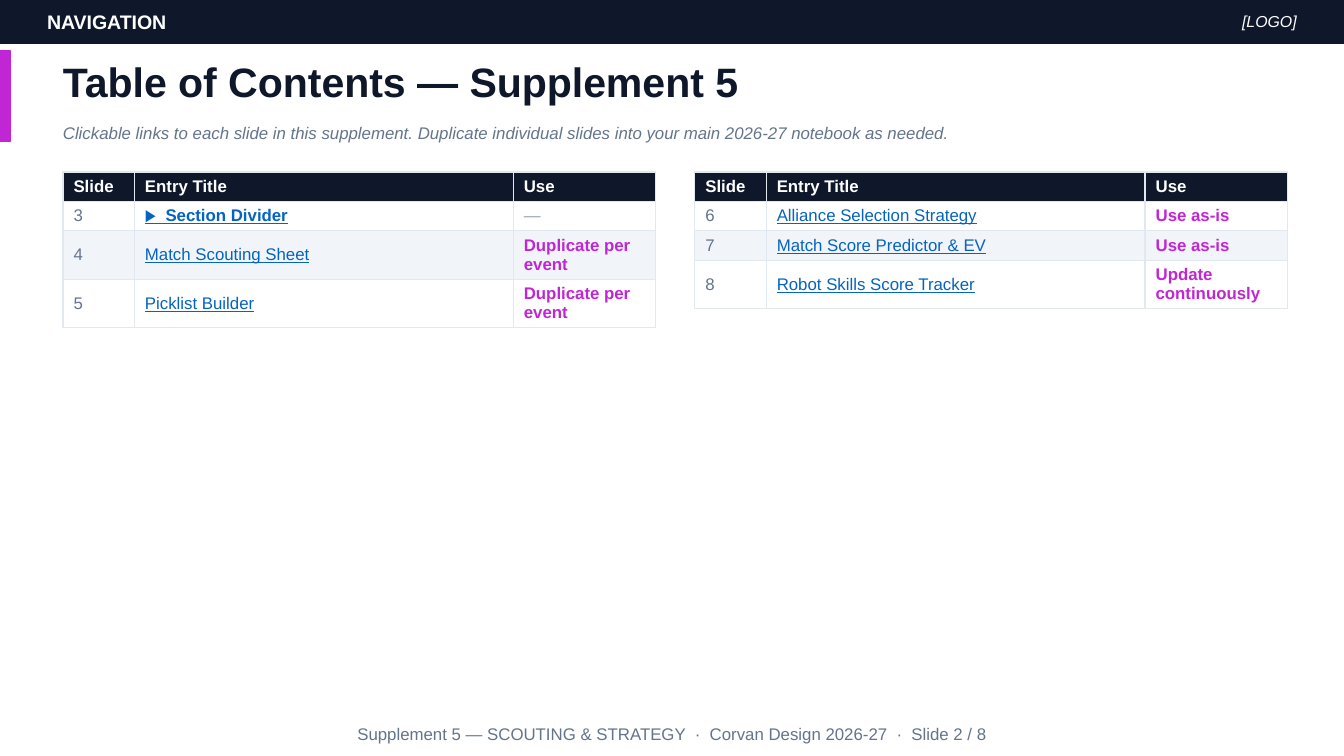
import pptx
import pptx.dml.color
import pptx.enum.shapes
import pptx.enum.text
import pptx.oxml
import pptx.oxml.ns
import pptx.util

Cm = pptx.util.Cm
Pt = pptx.util.Pt
RGB = pptx.dml.color.RGBColor
ALIGN = pptx.enum.text.PP_ALIGN
MIDDLE = pptx.enum.text.MSO_ANCHOR.MIDDLE

NAVY = RGB(0x0F, 0x17, 0x2A)
PINK = RGB(0xC0, 0x26, 0xD3)
SLATE = RGB(0x64, 0x74, 0x8B)
MUTED = RGB(0x94, 0xA3, 0xB8)
BLUE = RGB(0x05, 0x63, 0xC1)
PALE = RGB(0xF1, 0xF5, 0xF9)
RULE = RGB(0xE2, 0xE8, 0xF0)
WHITE = RGB(0xFF, 0xFF, 0xFF)

HEAD = ("Slide", "Entry Title", "Use")
COLS = (1.35, 7.16, 2.69)
LEFT = [
    ("3", "▶  Section Divider", "—"),
    ("4", "Match Scouting Sheet", "Duplicate per event"),
    ("5", "Picklist Builder", "Duplicate per event"),
]
RIGHT = [
    ("6", "Alliance Selection Strategy", "Use as-is"),
    ("7", "Match Score Predictor & EV", "Use as-is"),
    ("8", "Robot Skills Score Tracker", "Update continuously"),
]


def write(frame, text, size=9, color=SLATE, bold=False, italic=False,
          under=False, align=ALIGN.LEFT):
    """Put one formatted line of text into a text frame."""
    para = frame.paragraphs[0]
    para.alignment = align
    run = para.add_run()
    run.text = text
    font = run.font
    font.name, font.size = "Arial", Pt(size)
    font.bold, font.italic, font.underline = bold, italic, under
    font.color.rgb = color


class Deck:
    """Holds the style and the current slide."""

    def __init__(self):
        self.pres = pptx.Presentation()
        self.pres.slide_width, self.pres.slide_height = Cm(25.4), Cm(14.29)
        self.slide = self.pres.slides.add_slide(self.pres.slide_layouts[5])

    def frame(self, shape):
        """Strip insets and centre the text upright."""
        frame = shape.text_frame
        frame.word_wrap = True
        frame.auto_size = pptx.enum.text.MSO_AUTO_SIZE.NONE
        frame.vertical_anchor = MIDDLE
        frame.margin_left = frame.margin_right = 0
        frame.margin_top = frame.margin_bottom = 0
        return frame

    def bar(self, x, y, w, h, color):
        kind = pptx.enum.shapes.MSO_SHAPE.RECTANGLE
        bar = self.slide.shapes.add_shape(kind, Cm(x), Cm(y), Cm(w), Cm(h))
        bar.shadow.inherit = False
        bar.fill.solid()
        bar.fill.fore_color.rgb = color
        bar.line.color.rgb = color
        bar.line.width = Pt(1)

    def title(self, text, x, y, w, h, **style):
        title = self.slide.shapes.title
        title.left, title.top = Cm(x), Cm(y)
        title.width, title.height = Cm(w), Cm(h)
        write(self.frame(title), text, **style)

    def text(self, text, x, y, w, h, **style):
        box = self.slide.shapes.add_textbox(Cm(x), Cm(y), Cm(w), Cm(h))
        write(self.frame(box), text, **style)

    def cell(self, cell, text, fill, **style):
        cell.margin_left = cell.margin_right = Cm(0.2)
        cell.margin_top = cell.margin_bottom = Cm(0.1)
        cell.vertical_anchor = MIDDLE
        # Borders come before the fill in the cell's XML
        props = cell._tc.get_or_add_tcPr()
        for side in "LRTB":
            props.append(pptx.oxml.parse_xml(
                f'<a:ln{side} {pptx.oxml.ns.nsdecls("a")} w="{Pt(0.75)}">'
                f'<a:solidFill><a:srgbClr val="{RULE}"/></a:solidFill>'
                f'</a:ln{side}>'))
        cell.fill.solid()
        cell.fill.fore_color.rgb = fill
        write(cell.text_frame, text, **style)

    def table(self, rows, x, y):
        count = len(rows) + 1
        table = self.slide.shapes.add_table(
            count, len(COLS), Cm(x), Cm(y), Cm(sum(COLS)),
            Cm(0.3 * count)).table
        table.first_row = table.horz_banding = False
        for col, width in zip(table.columns, COLS):
            col.width = Cm(width)
        for c, text in enumerate(HEAD):
            self.cell(table.cell(0, c), text, NAVY, color=WHITE, bold=True)
        for r, (num, name, use) in enumerate(rows, 1):
            fill = PALE if r % 2 == 0 else WHITE
            none = use == "—"  # a section divider has no use
            self.cell(table.cell(r, 0), num, fill)
            self.cell(table.cell(r, 1), name, fill, color=BLUE,
                      bold=none, under=True)
            self.cell(table.cell(r, 2), use, fill, bold=not none,
                      italic=none, color=MUTED if none else PINK)


def main():
    deck = Deck()

    # Top band
    deck.bar(0, 0, 25.4, 0.81, NAVY)
    deck.text("NAVIGATION", 0.89, 0, 19.81, 0.81, size=10.5, color=WHITE,
              bold=True)
    deck.text("[LOGO]", 22.22, 0, 2.29, 0.81, size=8.5, color=WHITE,
              italic=True, align=ALIGN.RIGHT)

    # Heading with accent
    deck.bar(0, 0.97, 0.2, 1.7, PINK)
    deck.title("Table of Contents — Supplement 5", 1.19, 0.97, 23.19, 1.14,
               size=22, color=NAVY, bold=True)
    deck.text("Clickable links to each slide in this supplement. Duplicate "
              "individual slides into your main 2026-27 notebook as needed.",
              1.19, 2.24, 23.19, 0.56, italic=True)

    # Contents in two tables
    for rows, x in ((LEFT, 1.19), (RIGHT, 13.13)):
        deck.table(rows, x, 3.25)

    # Footer
    deck.text("Supplement 5 — SCOUTING & STRATEGY  ·  Corvan Design 2026-27"
              "  ·  Slide 2 / 8", 1.19, 13.51, 23.01, 0.71,
              align=ALIGN.CENTER)

    deck.pres.save("out.pptx")


if __name__ == "__main__":
    main()
